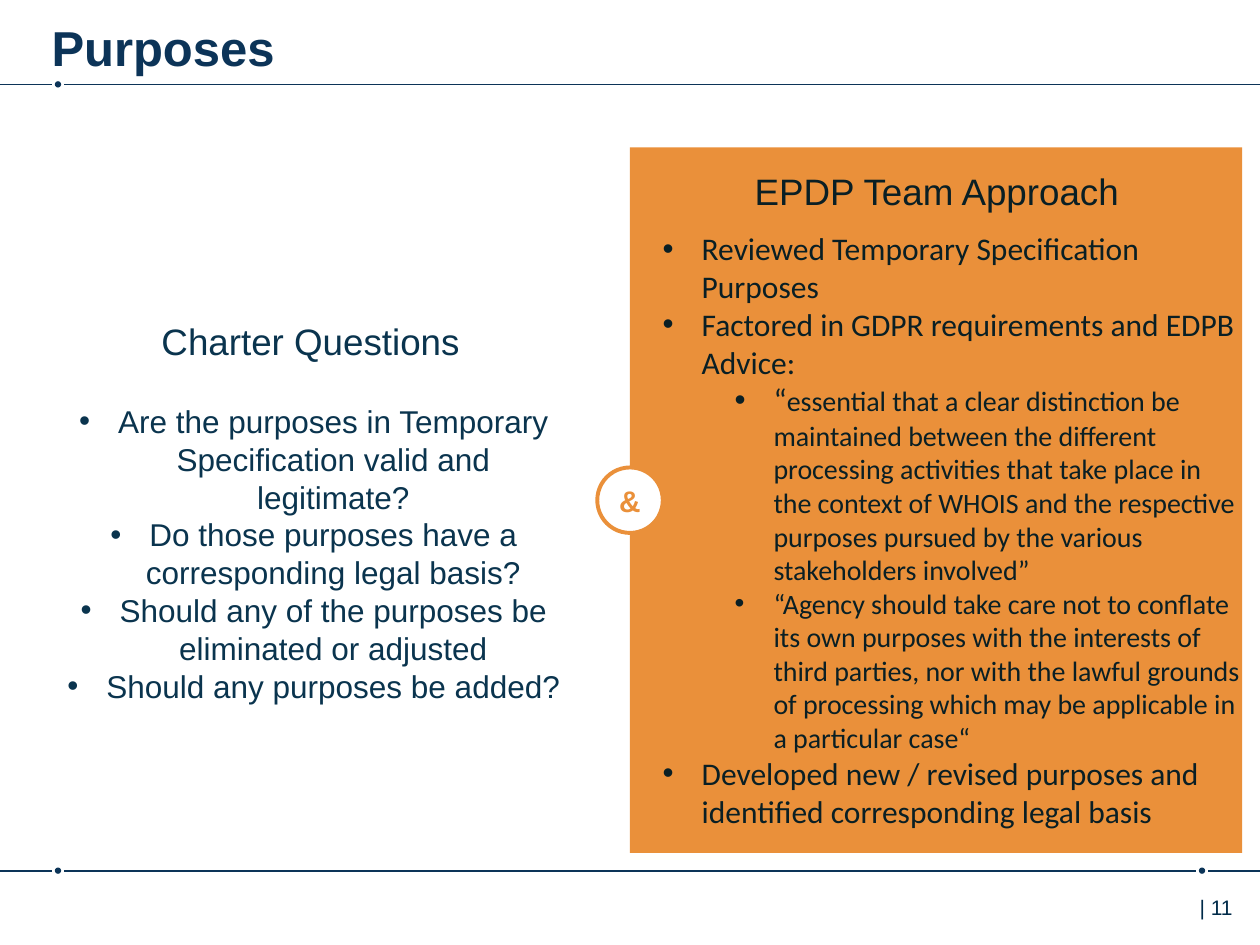
import pptx
import pptx.dml.color
import pptx.enum.shapes
import pptx.enum.text
import pptx.oxml
import pptx.oxml.ns
import pptx.util
from lxml import etree

Inches = pptx.util.Inches
Pt = pptx.util.Pt
Shapes = pptx.enum.shapes.MSO_SHAPE
Align = pptx.enum.text.PP_ALIGN
Anchor = pptx.enum.text.MSO_ANCHOR
qn = pptx.oxml.ns.qn

NAVY, INK, DARK = "0C3458", "0A344E", "0A1F24"
ORANGE, WHITE, NUMBER = "EA903A", "FFFFFF", "002B49"


def color(value):
    return pptx.dml.color.RGBColor.from_string(value)


class Deck:
    """Holds the style and the current slide."""

    font = "Arial"
    dot_size = 0.05
    dot_gap = 0.05
    hanging = 0.31

    def __init__(self, slide):
        self.slide = slide

    def shape(self, kind, left, top, width, height, fill, line=None, weight=1):
        shape = self.slide.shapes.add_shape(
            kind, Inches(left), Inches(top), Inches(width), Inches(height))
        shape.shadow.inherit = False
        shape.fill.solid()
        shape.fill.fore_color.rgb = color(fill)
        if line:
            shape.line.color.rgb = color(line)
            shape.line.width = Pt(weight)
        else:
            shape.line.fill.background()
        return shape

    def line(self, start, end, y):
        line = self.slide.shapes.add_connector(
            pptx.enum.shapes.MSO_CONNECTOR.STRAIGHT,
            Inches(start), Inches(y), Inches(end), Inches(y))
        line.line.color.rgb = color(NAVY)
        line.line.width = Pt(1)
        etree.SubElement(line._element.spPr, qn("a:effectLst"))

    def dotted_rule(self, y, dots):
        """A full-width rule, broken around each dot."""
        starts = [0] + [x + self.dot_gap for x in dots]
        ends = [x - self.dot_gap for x in dots] + [10]
        for start, end in zip(starts, ends):
            self.line(start, end, y)
        for x in dots:
            self.shape(Shapes.OVAL, x - self.dot_size / 2, y - self.dot_size / 2,
                       self.dot_size, self.dot_size, NAVY)

    def frame(self, left, top, width, height, insets=(0, 0, 0, 0)):
        box = self.slide.shapes.add_textbox(
            Inches(left), Inches(top), Inches(width), Inches(height))
        return self.set_frame(box.text_frame, insets)

    def set_frame(self, frame, insets=(0, 0, 0, 0)):
        frame.word_wrap = True
        (frame.margin_left, frame.margin_top,
         frame.margin_right, frame.margin_bottom) = map(Inches, insets)
        return frame

    def run(self, paragraph, text, size, ink, font=None, bold=False):
        run = paragraph.add_run()
        run.text = text
        run.font.name = font or self.font
        run.font.size = Pt(size)
        run.font.bold = bold
        run.font.color.rgb = color(ink)

    def heading(self, text, left, top, ink):
        paragraph = self.frame(left, top, 3.01, 1.15).paragraphs[0]
        paragraph.alignment = Align.CENTER
        paragraph.line_spacing = 0.9
        self.run(paragraph, text, 21, ink)

    def bullets(self, items, left, top, width, ink, font=None, align=Align.LEFT):
        """Each item is a level and its (text, size) runs."""
        frame = self.frame(left, top, width, 1.4)
        for index, (level, runs) in enumerate(items):
            paragraph = frame.add_paragraph() if index else frame.paragraphs[0]
            paragraph.level = level
            paragraph.alignment = align
            properties = paragraph._p.get_or_add_pPr()
            margin = 0.88 if level else self.hanging
            properties.set("marL", str(Inches(margin)))
            properties.set("indent", str(-Inches(self.hanging)))
            etree.SubElement(properties, qn("a:buFont")).set("typeface", "Arial")
            etree.SubElement(properties, qn("a:buChar")).set("char", "•")
            for text, size in runs:
                self.run(paragraph, text, size, ink, font)


def main():
    presentation = pptx.Presentation()
    presentation.slide_width = Inches(10)
    presentation.slide_height = Inches(7.5)
    deck = Deck(presentation.slides.add_slide(presentation.slide_layouts[6]))

    # Header and footer
    deck.dotted_rule(0.67, [0.46])
    deck.dotted_rule(6.91, [0.46, 9.54])
    title = deck.frame(0.41, 0.05, 8.76, 0.49, (0, 0.09, 0, 0))
    deck.run(title.paragraphs[0], "Purposes", 28, NAVY, bold=True)
    page_number = deck.frame(9.29, 7.05, 0.71, 0.4, (0.23, 0.05, 0, 0.05))
    deck.run(page_number.paragraphs[0], "| 11", 12, NUMBER)

    # Approach panel and joining badge
    deck.shape(Shapes.RECTANGLE, 5, 1.17, 4.86, 5.6, ORANGE)
    badge = deck.shape(Shapes.OVAL, 4.74, 3.71, 0.52, 0.52, WHITE, ORANGE, 2.25)
    ampersand = deck.set_frame(badge.text_frame)
    ampersand.vertical_anchor = Anchor.MIDDLE
    ampersand.paragraphs[0].alignment = Align.CENTER
    deck.run(ampersand.paragraphs[0], "&", 17, ORANGE, bold=True)

    # Charter questions
    questions = [
        "Are the purposes in Temporary Specification valid and legitimate?",
        "Do those purposes have a corresponding legal basis?",
        "Should any of the purposes be eliminated or adjusted",
        "Should any purposes be added?",
    ]
    deck.bullets([(0, [(question, 18)]) for question in questions],
                 0.49, 3.19, 4, INK, align=Align.CENTER)
    deck.heading("Charter Questions", 0.96, 2.57, INK)

    # Team approach
    deck.heading("EPDP Team Approach", 5.93, 1.38, DARK)
    approach = [
        (0, [("Reviewed Temporary Specification Purposes", 18)]),
        (0, [("Factored in GDPR requirements and EDPB Advice:", 18)]),
        (1, [("“", 18),
             ("essential that a clear distinction be maintained between the "
              "different processing activities that take place in the context "
              "of WHOIS and the respective purposes pursued by the various "
              "stakeholders involved”", 16)]),
        (1, [("“Agency should take care not to conflate its own purposes with "
              "the interests of third parties, nor with the lawful grounds of "
              "processing which may be applicable in a particular case“", 16)]),
        (0, [("Developed new / revised purposes and identified corresponding "
              "legal basis", 18)]),
    ]
    deck.bullets(approach, 5.26, 1.82, 4.6, DARK, font="Calibri")

    presentation.save("out.pptx")


if __name__ == "__main__":
    main()
